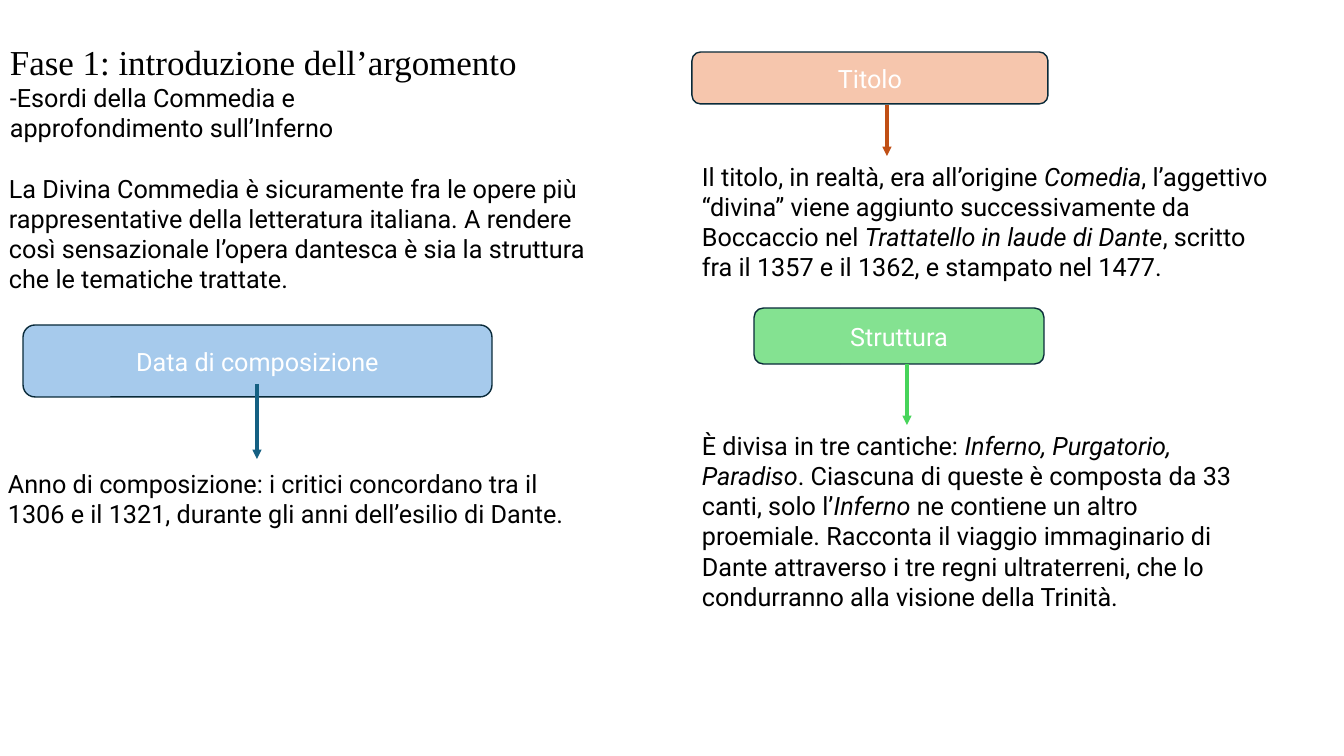
"""Builds the slide that introduces the Divina Commedia lesson."""
from lxml.etree import SubElement
from pptx import Presentation
from pptx.dml.color import RGBColor
from pptx.enum.shapes import MSO_CONNECTOR, MSO_SHAPE
from pptx.enum.text import MSO_ANCHOR, PP_ALIGN
from pptx.oxml.ns import qn
from pptx.util import Pt

PX = 9071
BLACK = RGBColor(0x00, 0x00, 0x00)
WHITE = RGBColor(0xFF, 0xFF, 0xFF)
OUTLINE = RGBColor(0x09, 0x2A, 0x39)
LIGHT_BLUE = RGBColor(0xA6, 0xCA, 0xEC)
BLUE = RGBColor(0x15, 0x60, 0x82)
PEACH = RGBColor(0xF6, 0xC6, 0xAD)
ORANGE = RGBColor(0xC0, 0x4F, 0x15)
LIGHT_GREEN = RGBColor(0x84, 0xE2, 0x91)
GREEN = RGBColor(0x47, 0xD4, 0x5A)

TITLE = ("Fase 1: introduzione dell’argomento", (0, -9, 1159, 146))

# Text between asterisks is italic.
PASSAGES = [
    ("-Esordi della Commedia e approfondimento sull’Inferno", (0, 77, 436, 72)),
    ("La Divina Commedia è sicuramente fra le opere più rappresentative della "
     "letteratura italiana. A rendere così sensazionale l’opera dantesca è sia la "
     "struttura che le tematiche trattate.", (-1, 168, 623, 132)),
    ("Il titolo, in realtà, era all’origine *Comedia*, l’aggettivo “divina” viene "
     "aggiunto successivamente da Boccaccio nel *Trattatello in laude di Dante*, "
     "scritto fra il 1357 e il 1362, e stampato nel 1477.", (692, 156, 588, 132)),
    ("Anno di composizione: i critici concordano tra il 1306 e il 1321, durante gli "
     "anni dell’esilio di Dante.", (-2, 463, 588, 72)),
    ("È divisa in tre cantiche: *Inferno, Purgatorio, Paradiso*. Ciascuna di queste è "
     "composta da 33 canti, solo l’*Inferno *ne contiene un altro proemiale. Racconta "
     "il viaggio immaginario di Dante attraverso i tre regni ultraterreni, che lo "
     "condurranno alla visione della Trinità.", (692, 425, 557, 194)),
]

TOPICS = [
    ("Data di composizione", (23, 325, 469, 72), LIGHT_BLUE, (257, 384, 459), BLUE),
    ("Titolo", (692, 52, 356, 52), PEACH, (887, 105, 156), ORANGE),
    ("Struttura", (754, 308, 290, 56), LIGHT_GREEN, (907, 364, 425), GREEN),
]


def px(*lengths):
    return [length * PX for length in lengths]


def write(tf, text, color=BLACK, font="Roboto", size=18):
    tf.word_wrap = True
    p = tf.paragraphs[0]
    for i, part in enumerate(text.split("*")):
        r = p.add_run()
        r.text = part
        r.font.name, r.font.size = font, Pt(size)
        r.font.color.rgb = color
        r.font.italic = i % 2 == 1
    return p


def add_text(s, text, box, **style):
    tf = s.shapes.add_textbox(*px(*box)).text_frame
    write(tf, text, **style)
    return tf


def add_topic(s, label, box, fill):
    sp = s.shapes.add_shape(MSO_SHAPE.ROUNDED_RECTANGLE, *px(*box))
    sp.shadow.inherit = False
    sp.fill.solid()
    sp.fill.fore_color.rgb = fill
    sp.line.color.rgb = OUTLINE
    sp.line.width = Pt(1)
    sp.text_frame.vertical_anchor = MSO_ANCHOR.MIDDLE
    write(sp.text_frame, label, WHITE).alignment = PP_ALIGN.CENTER


def add_arrow(s, x, top, bottom, color):
    cxn = s.shapes.add_connector(MSO_CONNECTOR.STRAIGHT, *px(x, top, x, bottom))
    cxn.line.color.rgb = color
    cxn.line.width = Pt(2.25)
    SubElement(cxn.line._get_or_add_ln(), qn("a:tailEnd"), type="triangle")
    SubElement(cxn._element.spPr, qn("a:effectLst"))


def main():
    prs = Presentation()
    prs.slide_width, prs.slide_height = px(1344, 756)
    s = prs.slides.add_slide(prs.slide_layouts[6])

    tf = add_text(s, *TITLE, font="Times New Roman", size=25)
    tf.vertical_anchor = MSO_ANCHOR.MIDDLE
    tf.paragraphs[0].line_spacing = 0.9
    for text, box in PASSAGES:
        add_text(s, text, box)
    for label, box, fill, arrow, color in TOPICS:
        add_topic(s, label, box, fill)
        add_arrow(s, *arrow, color)

    prs.save("out.pptx")


if __name__ == "__main__":
    main()
